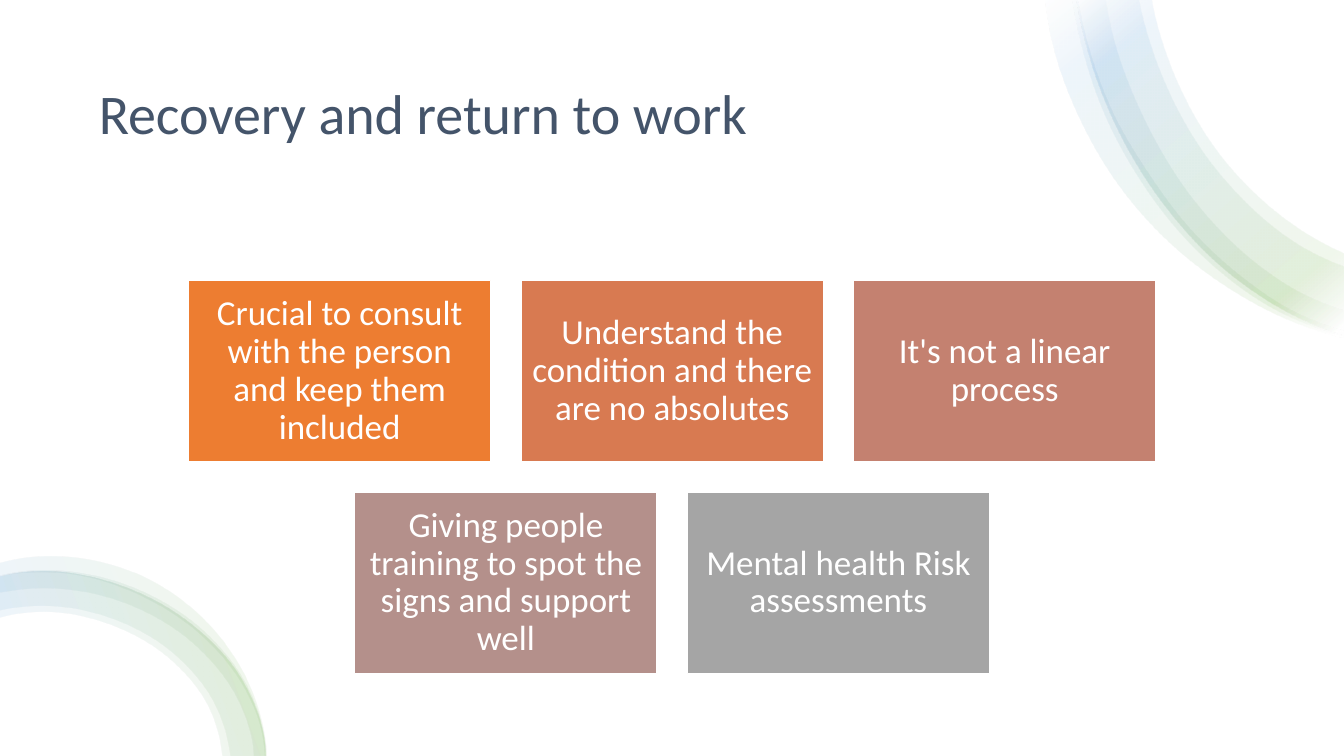
import dataclasses
import math

import lxml.etree
import pptx
import pptx.dml.color
import pptx.enum.shapes
import pptx.enum.text
import pptx.oxml
import pptx.oxml.ns
import pptx.util

Cm = pptx.util.Cm
Pt = pptx.util.Pt
qn = pptx.oxml.ns.qn


@dataclasses.dataclass(frozen=True)
class Theme:
    font: str = "Calibri"
    title_size: int = 40
    card_size: int = 25
    title_color: str = "44546A"
    white: str = "FFFFFF"
    card_fills: tuple = ("ED7D31", "D87A51", "C48170", "B4908B", "A5A5A5")
    ribbon_stops: tuple = ((2, "FFFFFF"), (16, "70AD47"), (85, "5B9BD5"), (100, "FFFFFF"))
    ribbon_opacity: int = 10


@dataclasses.dataclass(frozen=True)
class Box:
    """A region of the page, in centimetres."""
    left: float
    top: float
    width: float
    height: float


THEME = Theme()
PAGE = Box(0, 0, 33.87, 19.05)
TITLE = "Recovery and return to work"
CARD_ROWS = (
    ("Crucial to consult with the person and keep them included",
     "Understand the condition and there are no absolutes",
     "It's not a linear process"),
    ("Giving people training to spot the signs and support well",
     "Mental health Risk assessments"),
)

# Each strand is an outer and an inner edge, in centimetres from its region's corner.
TOP_SHARED_EDGE = ((0.94, 0), (1.73, 2.73), (3.07, 5.07), (4.87, 6.96), (7.05, 8.23), (7.66, 8.43))
TOP_STRANDS = (
    (((0.15, 0), (0.24, 0.66), (1.18, 3.33), (2.15, 4.88), (3.39, 6.22), (4.81, 7.29),
      (6.36, 8.1), (7.66, 8.51)),
     ((7.66, 8.33), (6.46, 7.87), (5.04, 6.93), (3.8, 5.77), (2.76, 4.39), (1.89, 2.92),
      (1.28, 1.32), (0.97, 0))),
    (TOP_SHARED_EDGE,
     ((7.66, 6.38), (7, 6.05), (4.76, 4.17), (3.21, 1.4), (2.83, 0))),
    (((0.84, 0), (0.93, 0.51), (1.71, 3.02), (2.55, 4.55), (3.59, 5.92), (6.29, 7.98),
      (7.66, 8.46)),
     ((7.66, 7.82), (6.57, 7.37), (5.27, 6.48), (4.15, 5.36), (2.48, 2.64), (1.92, 1.12),
      (1.68, 0))),
    (TOP_SHARED_EDGE,
     ((7.66, 6.71), (6.85, 6.35), (4.53, 4.37), (2.93, 1.5), (2.51, 0))),
)
BOTTOM_SHARED_EDGE = ((6.68, 5.05), (6.65, 4.67), (6, 2.99), (4.7, 1.64), (2.97, 0.73),
                      (1.02, 0.4), (0, 0.53))
BOTTOM_STRANDS = (
    (BOTTOM_SHARED_EDGE,
     ((0, 1.57), (1.02, 1.42), (2.72, 1.72), (4.22, 2.56), (5.23, 3.78), (5.59, 5.05))),
    (BOTTOM_SHARED_EDGE,
     ((0, 1.39), (1.02, 1.27), (2.77, 1.57), (4.32, 2.43), (5.38, 3.7), (5.79, 5.05))),
    (((6.68, 5.05), (6.58, 4.26), (6.27, 3.4), (5.16, 1.93), (3.61, 0.91), (1.75, 0.4),
      (0.79, 0.38), (0, 0.5)),
     ((0, 0.94), (0.84, 0.83), (2.57, 1.01), (4.88, 2.23), (5.94, 3.55), (6.35, 4.75),
      (6.38, 5.05))),
    (((6.71, 5.05), (6.35, 3.45), (5.33, 1.82), (3.76, 0.61), (1.8, 0.05), (0.79, 0.05),
      (0, 0.2)),
     ((0, 0.53), (0.81, 0.43), (2.21, 0.55), (3.53, 1.01), (5.08, 2.03), (5.99, 3.09),
      (6.55, 4.34), (6.65, 5.05))),
)


def color(value):
    return pptx.dml.color.RGBColor.from_string(value)


def write(shape, text, size, text_color, alignment):
    frame = shape.text_frame
    frame.word_wrap = True
    frame.vertical_anchor = pptx.enum.text.MSO_ANCHOR.MIDDLE
    para = frame.paragraphs[0]
    para.alignment = alignment
    para.line_spacing = 0.9
    span = para.add_run()
    span.text = text
    span.font.name = THEME.font
    span.font.size = Pt(size)
    span.font.color.rgb = color(text_color)


def add_rectangle(page, box, fill):
    shape = page.shapes.add_shape(pptx.enum.shapes.MSO_SHAPE.RECTANGLE,
                                  Cm(box.left), Cm(box.top), Cm(box.width), Cm(box.height))
    shape.shadow.inherit = False
    shape.fill.solid()
    shape.fill.fore_color.rgb = color(fill)
    shape.line.fill.background()
    return shape


def curve_handles(points):
    """Return the two Bézier handles of each segment of a smooth curve through the points."""
    chords = [math.dist(start, end) for start, end in zip(points, points[1:])]
    slopes = [((x2 - x1) / chord, (y2 - y1) / chord)
              for (x1, y1), (x2, y2), chord in zip(points, points[1:], chords)]
    inner = [tuple((a * after + b * before) / (before + after) for a, b in zip(first, second))
             for first, second, before, after in zip(slopes, slopes[1:], chords, chords[1:])]
    first = tuple(2 * a - b for a, b in zip(slopes[0], inner[0]))
    last = tuple(2 * a - b for a, b in zip(slopes[-1], inner[-1]))
    tangents = [first, *inner, last]
    return [(tuple(p + t * chord / 3 for p, t in zip(start, leaving)),
             tuple(p - t * chord / 3 for p, t in zip(end, arriving)))
            for start, end, leaving, arriving, chord
            in zip(points, points[1:], tangents, tangents[1:], chords)]


def bend(shape, box, handles):
    """Turn the outline's straight segments into curves; None keeps one straight."""
    segments = list(shape._element.iter(qn("a:lnTo")))
    for segment, pair in zip(segments, handles):
        if pair is None:
            continue
        segment.tag = qn("a:cubicBezTo")
        for position, (x, y) in enumerate(pair):
            point = lxml.etree.Element(qn("a:pt"))
            point.set("x", str(Cm(box.left + x) - shape.left))
            point.set("y", str(Cm(box.top + y) - shape.top))
            segment.insert(position, point)


def fill_ribbon(shape, angle):
    """Give the shape a translucent gradient at a clockwise angle in degrees."""
    shape.fill.background()
    properties = shape.fill._xPr
    stops = "".join(
        f'<a:gs pos="{place * 1000}"><a:srgbClr val="{value}">'
        f'<a:alpha val="{THEME.ribbon_opacity * 1000}"/></a:srgbClr></a:gs>'
        for place, value in THEME.ribbon_stops)
    gradient = pptx.oxml.parse_xml(
        f'<a:gradFill {pptx.oxml.ns.nsdecls("a")} rotWithShape="1"><a:gsLst>{stops}</a:gsLst>'
        f'<a:lin ang="{angle * 60000}" scaled="0"/></a:gradFill>')
    properties.replace(properties.find(qn("a:noFill")), gradient)


def add_ribbon(page, box, strands, angle):
    for outer, inner in strands:
        outline = [(Cm(box.left + x), Cm(box.top + y)) for x, y in outer + inner]
        builder = page.shapes.build_freeform(*outline[0])
        builder.add_line_segments(outline[1:], close=True)
        strand = builder.convert_to_shape()
        bend(strand, box, curve_handles(outer) + [None] + curve_handles(inner))
        strand.shadow.inherit = False
        strand.line.fill.background()
        fill_ribbon(strand, angle)


def add_title(page, box):
    title = page.shapes.add_textbox(Cm(box.left), Cm(box.top), Cm(box.width), Cm(box.height))
    write(title, TITLE, THEME.title_size, THEME.title_color, pptx.enum.text.PP_ALIGN.LEFT)


def add_card(page, box, text, fill):
    card = add_rectangle(page, box, fill)
    card.line.color.rgb = color(THEME.white)
    card.line.width = Pt(1)
    frame = card.text_frame
    frame.margin_left = frame.margin_right = frame.margin_top = frame.margin_bottom = Cm(0.25)
    write(card, text, THEME.card_size, THEME.white, pptx.enum.text.PP_ALIGN.CENTER)


def add_card_grid(page, box, gap=0.76):
    """Lay the rows of equal cards in the box, each row centred."""
    columns = max(len(row) for row in CARD_ROWS)
    width = (box.width - gap * (columns - 1)) / columns
    height = (box.height - gap * (len(CARD_ROWS) - 1)) / len(CARD_ROWS)
    fills = iter(THEME.card_fills)
    for row_number, row in enumerate(CARD_ROWS):
        indent = (columns - len(row)) * (width + gap) / 2
        top = box.top + row_number * (height + gap)
        for column, text in enumerate(row):
            left = box.left + indent + column * (width + gap)
            add_card(page, Box(left, top, width, height), text, next(fills))


def main():
    deck = pptx.Presentation()
    deck.slide_width, deck.slide_height = Cm(PAGE.width), Cm(PAGE.height)
    page = deck.slides.add_slide(deck.slide_layouts[6])
    add_rectangle(page, PAGE, THEME.white)
    add_title(page, Box(2.24, 1.29, 29.39, 3.3))
    add_ribbon(page, Box(26.2, 0, 7.67, 8.51), TOP_STRANDS, angle=230)
    add_ribbon(page, Box(0, 14, 6.71, 5.05), BOTTOM_STRANDS, angle=160)
    add_card_grid(page, Box(4.75, 7.07, 24.38, 9.9))
    deck.save("out.pptx")


if __name__ == "__main__":
    main()
